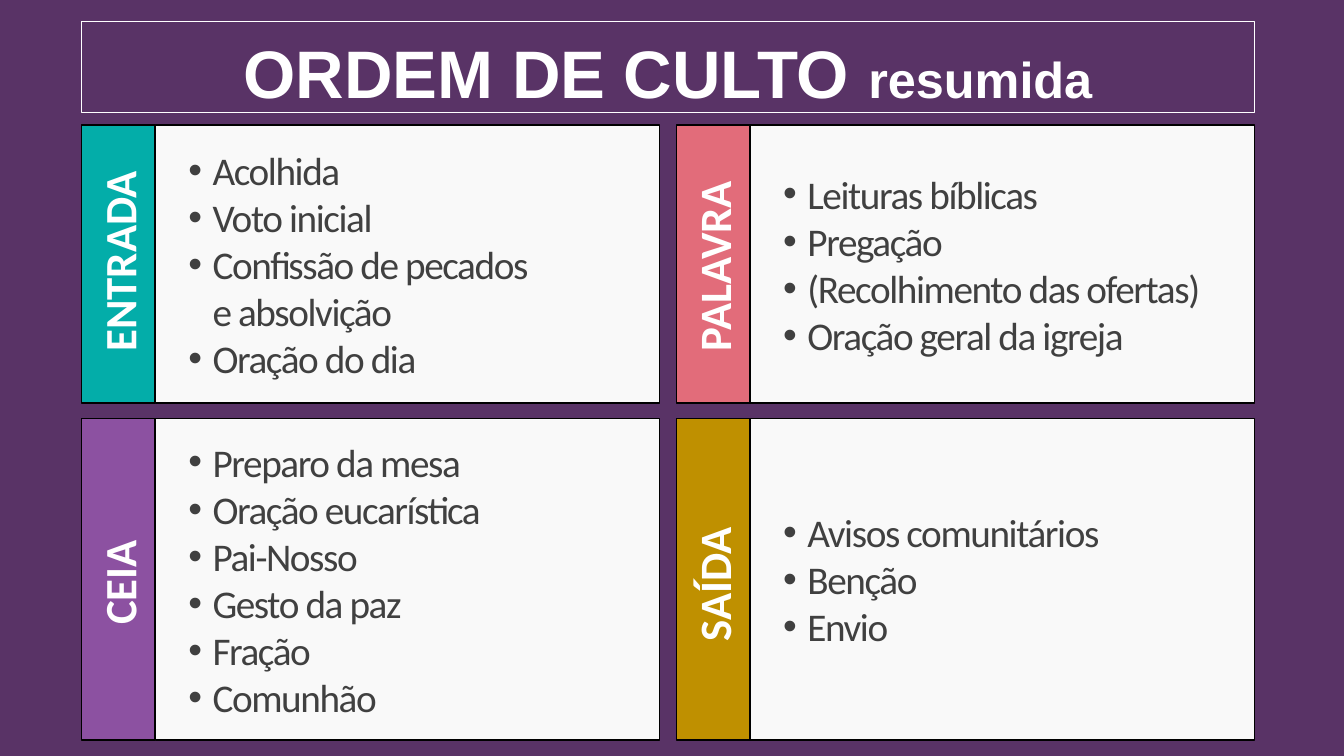
from pptx import Presentation
from pptx.dml.color import RGBColor as RGB
from pptx.enum.shapes import MSO_SHAPE as SHAPE
from pptx.enum.text import MSO_ANCHOR as ANCHOR, MSO_AUTO_SIZE as FIT, PP_ALIGN as ALIGN
from pptx.oxml.ns import qn
from pptx.util import Inches, Pt
from lxml import etree

PLUM = RGB(0x59, 0x33, 0x66)
PAPER = RGB(0xF9, 0xF9, 0xF9)
INK = RGB(0x40, 0x40, 0x40)
WHITE = RGB(0xFF, 0xFF, 0xFF)
BLACK = RGB(0, 0, 0)
TEAL = RGB(0x03, 0xAD, 0xA9)
ROSE = RGB(0xE2, 0x6C, 0x7A)
VIOLET = RGB(0x8C, 0x51, 0xA1)
GOLD = RGB(0xBF, 0x90, 0x00)

LEFT, WIDTH = 0.81, 11.63
GAP = 0.17
CARD = (WIDTH - GAP) / 2
TAB = 0.73

# Label, colour, space below the label, items; one list per row
ROWS = [
    (1.24, 2.76, [
        ("ENTRADA", TEAL, 0.51, ["Acolhida", "Voto inicial",
                                 "Confissão de pecados|e absolvição", "Oração do dia"]),
        ("PALAVRA", ROSE, 0.51, ["Leituras bíblicas", "Pregação",
                                 "(Recolhimento das ofertas)", "Oração geral da igreja"]),
    ]),
    (4.15, 3.19, [
        ("CEIA", VIOLET, 1.14, ["Preparo da mesa", "Oração eucarística", "Pai-Nosso",
                                "Gesto da paz", "Fração", "Comunhão"]),
        ("SAÍDA", GOLD, 0.98, ["Avisos comunitários", "Benção", "Envio"]),
    ]),
]


def write(para, text, size, color, font="Calibri", bold=False, space=0, align=ALIGN.LEFT):
    """Add text to a paragraph; a bar marks a line break."""
    para.alignment = align
    for i, line in enumerate(text.split("|")):
        if i:
            para.add_line_break()
        run = para.add_run()
        run.text = line
        face = run.font
        face.name, face.size, face.bold = font, Pt(size), bold
        face.color.rgb = color
        if space:
            run._r.get_or_add_rPr().set("spc", str(space * 100))


def bullet(para):
    props = para._p.get_or_add_pPr()
    props.set("marL", str(Inches(0.47)))
    props.set("indent", str(Inches(-0.24)))
    etree.SubElement(props, qn("a:buFont")).set("typeface", "Arial")
    etree.SubElement(props, qn("a:buChar")).set("char", "•")


def panel(slide, x, y, w, h, fill):
    box = slide.shapes.add_shape(SHAPE.RECTANGLE, *map(Inches, (x, y, w, h)))
    box.shadow.inherit = False
    box.fill.solid()
    box.fill.fore_color.rgb = fill
    box.line.color.rgb = BLACK
    box.line.width = Pt(1)
    frame = box.text_frame
    frame.word_wrap = True
    frame.vertical_anchor = ANCHOR.MIDDLE
    return frame


def card(slide, x, y, w, h, label, color, below, items):
    # List
    frame = panel(slide, x + TAB, y, w - TAB, h, PAPER)
    for i, item in enumerate(items):
        para = frame.add_paragraph() if i else frame.paragraphs[0]
        bullet(para)
        write(para, item, 28, INK, space=-1)
    # Upright label
    frame = panel(slide, x, y, TAB, h, color)
    frame._txBody.bodyPr.set("vert", "vert270")
    frame.margin_bottom = Inches(below)
    write(frame.paragraphs[0], label, 32, WHITE, bold=True)


def head(slide, x, y, w, h):
    title = slide.shapes.title
    title.left, title.top, title.width, title.height = map(Inches, (x, y, w, h))
    title.line.color.rgb = WHITE
    title.line.width = Pt(0.75)
    frame = title.text_frame
    frame.auto_size = FIT.NONE
    frame.vertical_anchor = ANCHOR.TOP
    frame.margin_top = Inches(0.1)
    for text, size in (("ORDEM DE CULTO ", 48), ("resumida", 36)):
        write(frame.paragraphs[0], text, size, WHITE, font="Arial", bold=True,
              align=ALIGN.CENTER)


def main():
    deck = Presentation()
    deck.slide_width, deck.slide_height = Inches(13.33), Inches(7.5)
    slide = deck.slides.add_slide(deck.slide_layouts[5])
    slide.background.fill.solid()
    slide.background.fill.fore_color.rgb = PLUM

    head(slide, LEFT, 0.21, WIDTH, 0.91)
    for y, h, cards in ROWS:
        for i, parts in enumerate(cards):
            card(slide, LEFT + i * (CARD + GAP), y, CARD, h, *parts)
    deck.save("out.pptx")


if __name__ == "__main__":
    main()
